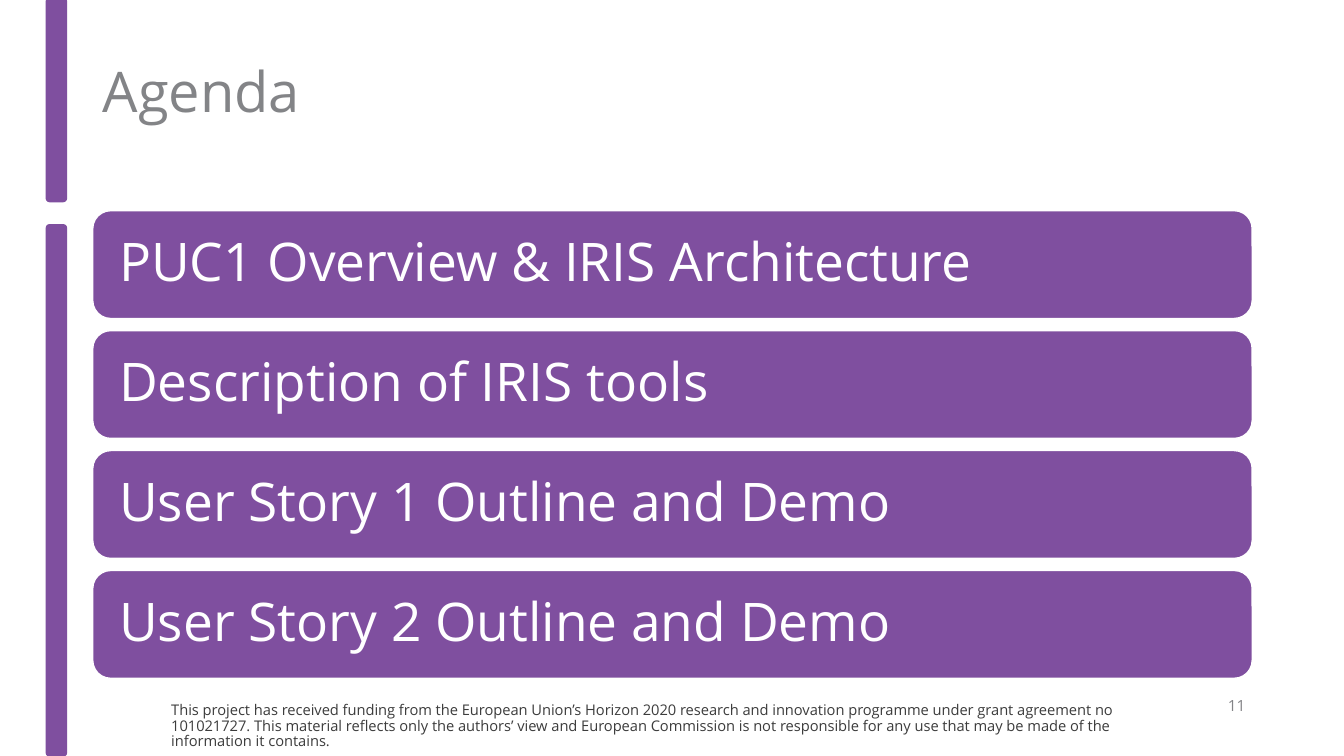
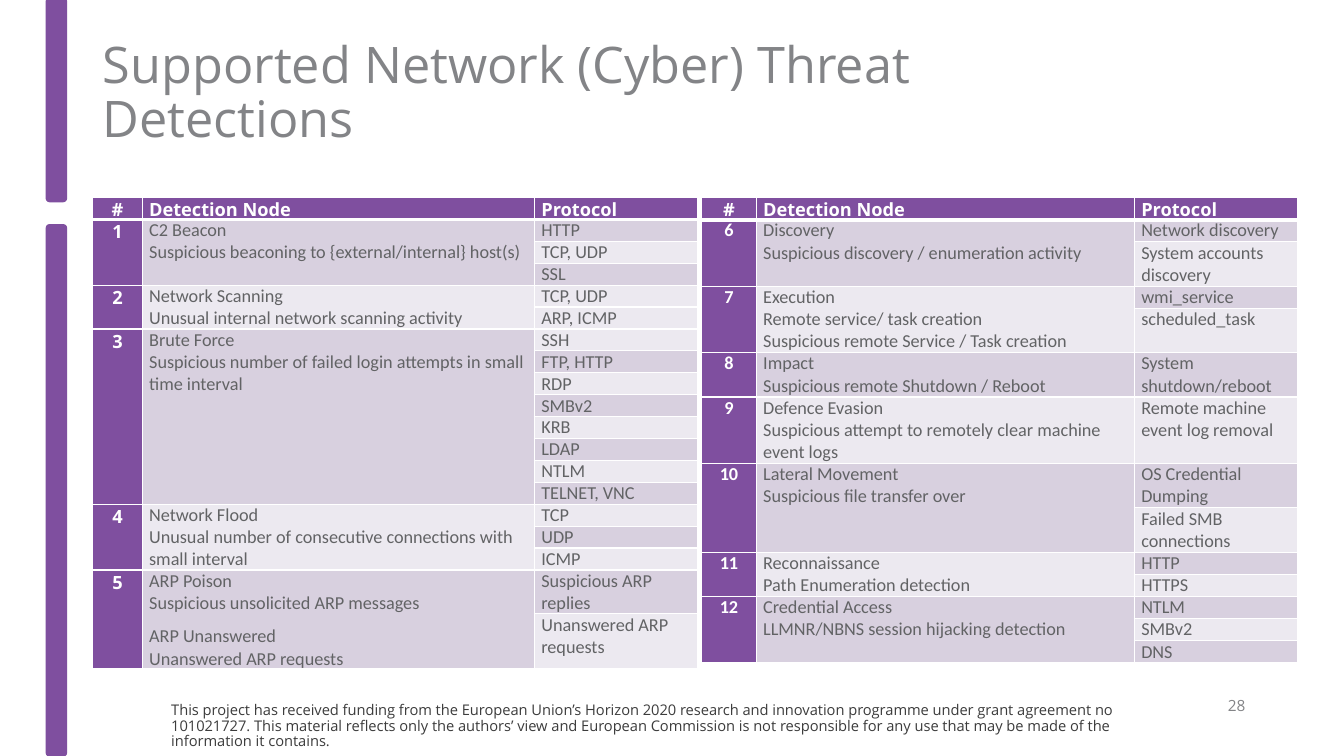
from copy import deepcopy
from dataclasses import dataclass

from lxml import etree
from pptx import Presentation
from pptx.dml.color import RGBColor
from pptx.enum.shapes import MSO_SHAPE
from pptx.enum.text import MSO_ANCHOR, MSO_AUTO_SIZE, PP_ALIGN
from pptx.oxml.ns import qn
from pptx.util import Inches, Pt

ROUNDED = MSO_SHAPE.ROUNDED_RECTANGLE
MIDDLE, TOP = MSO_ANCHOR.MIDDLE, MSO_ANCHOR.TOP
LEFT, CENTER = PP_ALIGN.LEFT, PP_ALIGN.CENTER
NO_FIT = MSO_AUTO_SIZE.NONE


@dataclass(frozen=True)
class Theme:
    purple: str = "7F4F9F"
    white: str = "FFFFFF"
    grey: str = "838487"
    cell_text: str = "626365"
    footer_text: str = "3C3C3C"
    dark_row: str = "D8D0DF"
    light_row: str = "ECE9F0"
    font: str = "Open Sans"
    table_font: str = "Calibri"
    title: float = 40
    long_title: float = 36
    agenda: float = 38
    table: float = 13
    number: float = 11
    footer: float = 10.5


T = Theme()

FUNDING = (
    "This project has received funding from the European Union’s Horizon 2020 research and "
    "innovation programme under grant agreement no 101021727. This material reflects only the "
    "authors’ view and European Commission is not responsible for any use that may be made of "
    "the information it contains."
)
BANDS = [(-0.02, 2.02), (2.23, 5.27)]

AGENDA = [
    "PUC1 Overview & IRIS Architecture",
    "Description of IRIS tools",
    "User Story 1 Outline and Demo",
    "User Story 2 Outline and Demo",
]

HEADER = ["#", "Detection Node", "Protocol"]
LEFT_TABLE = {
    "left": 0.92,
    "cols": [0.49, 3.89, 1.62],
    "line": 0.21,
    "number_font": T.font,
    "light_rows": {5},
    "groups": [
        (1, ["C2 Beacon\nSuspicious beaconing to {external/internal} host(s)"],
         [("HTTP", 1), ("TCP, UDP", 1), ("SSL", 1)]),
        (2, ["Network Scanning\nUnusual internal network scanning activity"],
         [("TCP, UDP", 1), ("ARP, ICMP", 1)]),
        (3, ["Brute Force\nSuspicious number of failed login attempts in small time interval"],
         [("SSH", 1), ("FTP, HTTP", 1), ("RDP", 1), ("SMBv2", 1),
          ("KRB", 1), ("LDAP", 1), ("NTLM", 1), ("TELNET, VNC", 1)]),
        (4, ["Network Flood\nUnusual number of consecutive connections with small interval"],
         [("TCP", 1), ("UDP", 1), ("ICMP", 1)]),
        (5, ["ARP Poison\nSuspicious unsolicited ARP messages",
             "ARP Unanswered\nUnanswered ARP requests"],
         [("Suspicious ARP replies", 2), ("Unanswered ARP requests", 2)]),
    ],
}
RIGHT_TABLE = {
    "left": 6.96,
    "cols": [0.54, 3.75, 1.62],
    "line": 0.22,
    "number_font": T.table_font,
    "light_rows": set(),
    "groups": [
        (6, ["Discovery\nSuspicious discovery / enumeration activity"],
         [("Network discovery", 1), ("System accounts discovery", 2)]),
        (7, ["Execution\nRemote service/ task creation\n"
             "Suspicious remote Service / Task creation"],
         [("wmi_service", 1), ("scheduled_task", 2)]),
        (8, ["Impact\nSuspicious remote Shutdown / Reboot"],
         [("System shutdown/reboot", 2)]),
        (9, ["Defence Evasion\nSuspicious attempt to remotely clear machine event logs"],
         [("Remote machine event log removal", 3)]),
        (10, ["Lateral Movement\nSuspicious file transfer over"],
         [("OS Credential Dumping", 2), ("Failed SMB connections", 2)]),
        (11, ["Reconnaissance\nPath Enumeration detection"],
         [("HTTP", 1), ("HTTPS", 1)]),
        (12, ["Credential Access\nLLMNR/NBNS session hijacking detection"],
         [("NTLM", 1), ("SMBv2", 1), ("DNS", 1)]),
    ],
}


def rgb(value):
    return RGBColor.from_string(value)


def write(tf, paragraphs, size, color, font=T.font, bold=False, align=LEFT,
          spacing=None, after=None):
    for i, text in enumerate(paragraphs):
        p = tf.add_paragraph() if i else tf.paragraphs[0]
        p.text = text
        p.alignment = align
        if spacing:
            p.line_spacing = spacing
        if after:
            p.space_after = Pt(after)
        for r in p.runs:
            r.font.size = Pt(size)
            r.font.name = font
            r.font.bold = bold
            r.font.color.rgb = rgb(color)
        for br in p._p.findall(qn("a:br")):
            br.insert(0, deepcopy(p.runs[0]._r.rPr))


def add_box(slide, box, text, size, color, **fmt):
    sp = slide.shapes.add_textbox(*map(Inches, box))
    sp.text_frame.word_wrap = True
    write(sp.text_frame, [text], size, color, **fmt)
    return sp


def add_bar(slide, box, line):
    sp = slide.shapes.add_shape(ROUNDED, *map(Inches, box))
    sp.shadow.inherit = False
    sp.fill.solid()
    sp.fill.fore_color.rgb = rgb(T.purple)
    sp.line.color.rgb = rgb(line)
    sp.line.width = Pt(1)
    return sp


def dress_layout(layout, slide):
    parts = [add_box(slide, (1.6, 6.92, 10.01, 0.45), FUNDING, T.footer,
                     T.footer_text, spacing=0.9)]
    parts += [add_bar(slide, (0.46, top, 0.2, height), T.purple) for top, height in BANDS]
    for sp in parts:
        layout.shapes._spTree.append(sp._element)


def add_slide(prs, layout, title, size, width, number):
    slide = prs.slides.add_slide(layout)
    sp = slide.shapes.title
    sp.left, sp.top, sp.width, sp.height = map(Inches, (0.92, 0.37, width, 1.13))
    tf = sp.text_frame
    tf.word_wrap = True
    tf.auto_size = NO_FIT
    tf.vertical_anchor = MIDDLE
    write(tf, [title], size, T.grey, spacing=0.9)
    add_box(slide, (12.08, 6.86, 0.5, 0.4), number, T.number, T.grey)
    return slide


def add_agenda(slide):
    for i, item in enumerate(AGENDA):
        sp = add_bar(slide, (0.92, 2.09 + 1.19 * i, 11.5, 1.07), T.white)
        tf = sp.text_frame
        tf.word_wrap = True
        tf.vertical_anchor = MIDDLE
        tf.margin_left = tf.margin_right = tf.margin_top = tf.margin_bottom = Inches(0.21)
        write(tf, [item], T.agenda, T.white, spacing=0.9)


def set_borders(cell, row):
    widths = {"lnL": 1, "lnR": 1, "lnT": 3 if row == 1 else 1, "lnB": 1 if row else 3}
    tcPr = cell._tc.get_or_add_tcPr()
    for i, (side, width) in enumerate(widths.items()):
        ln = etree.Element(qn(f"a:{side}"), w=str(Pt(width)))
        fill = etree.SubElement(ln, qn("a:solidFill"))
        etree.SubElement(fill, qn("a:srgbClr"), val=T.white)
        tcPr.insert(i, ln)


def format_cell(cell, row, fill):
    cell.margin_left = cell.margin_right = Inches(0.07)
    cell.margin_top = cell.margin_bottom = 0
    cell.vertical_anchor = TOP
    cell.fill.solid()
    cell.fill.fore_color.rgb = rgb(fill)
    set_borders(cell, row)
    end = cell.text_frame.paragraphs[0]._p.get_or_add_endParaRPr()
    end.set("sz", str(int(T.table * 100)))


def add_detections(slide, data):
    lines = [1] + [n for _, _, protocols in data["groups"] for _, n in protocols]
    heights = [data["line"] * n for n in lines]
    box = (data["left"], 1.96, sum(data["cols"]), sum(heights))
    table = slide.shapes.add_table(len(lines), len(HEADER), *map(Inches, box)).table
    table.horz_banding = False
    for column, width in zip(table.columns, data["cols"]):
        column.width = Inches(width)
    for table_row, height in zip(table.rows, heights):
        table_row.height = Inches(height)

    def put(row, col, paragraphs, fill, color=T.cell_text, font=T.table_font, bold=False):
        cell = table.cell(row, col)
        write(cell.text_frame, paragraphs, T.table, color, font=font, bold=bold,
              align=LEFT if col else CENTER, after=8)
        format_cell(cell, row, fill)

    for col, label in enumerate(HEADER):
        put(0, col, [label], T.purple, T.white, T.font, True)
    row = 1
    for i, (number, node, protocols) in enumerate(data["groups"]):
        node_fill = T.light_row if i % 2 else T.dark_row
        last = row + len(protocols) - 1
        put(row, 0, [str(number)], T.purple, T.white, data["number_font"], True)
        put(row, 1, node, node_fill)
        for col, fill in enumerate((T.purple, node_fill)):
            for covered in range(row + 1, last + 1):
                format_cell(table.cell(covered, col), covered, fill)
            if last > row:
                table.cell(row, col).merge(table.cell(last, col))
        for r, (protocol, _) in enumerate(protocols, row):
            dark = r % 2 and r not in data["light_rows"]
            put(r, 2, [protocol], T.dark_row if dark else T.light_row)
        row = last + 1


def main():
    prs = Presentation()
    prs.slide_width, prs.slide_height = Inches(13.33), Inches(7.5)
    layout = prs.slide_layouts[5]
    agenda = add_slide(prs, layout, "Agenda", T.title, 9.5, "11")
    dress_layout(layout, agenda)
    add_agenda(agenda)
    threats = add_slide(prs, layout, "Supported Network (Cyber) Threat Detections",
                        T.long_title, 9.88, "28")
    for data in (LEFT_TABLE, RIGHT_TABLE):
        add_detections(threats, data)
    prs.save("out.pptx")


if __name__ == "__main__":
    main()
